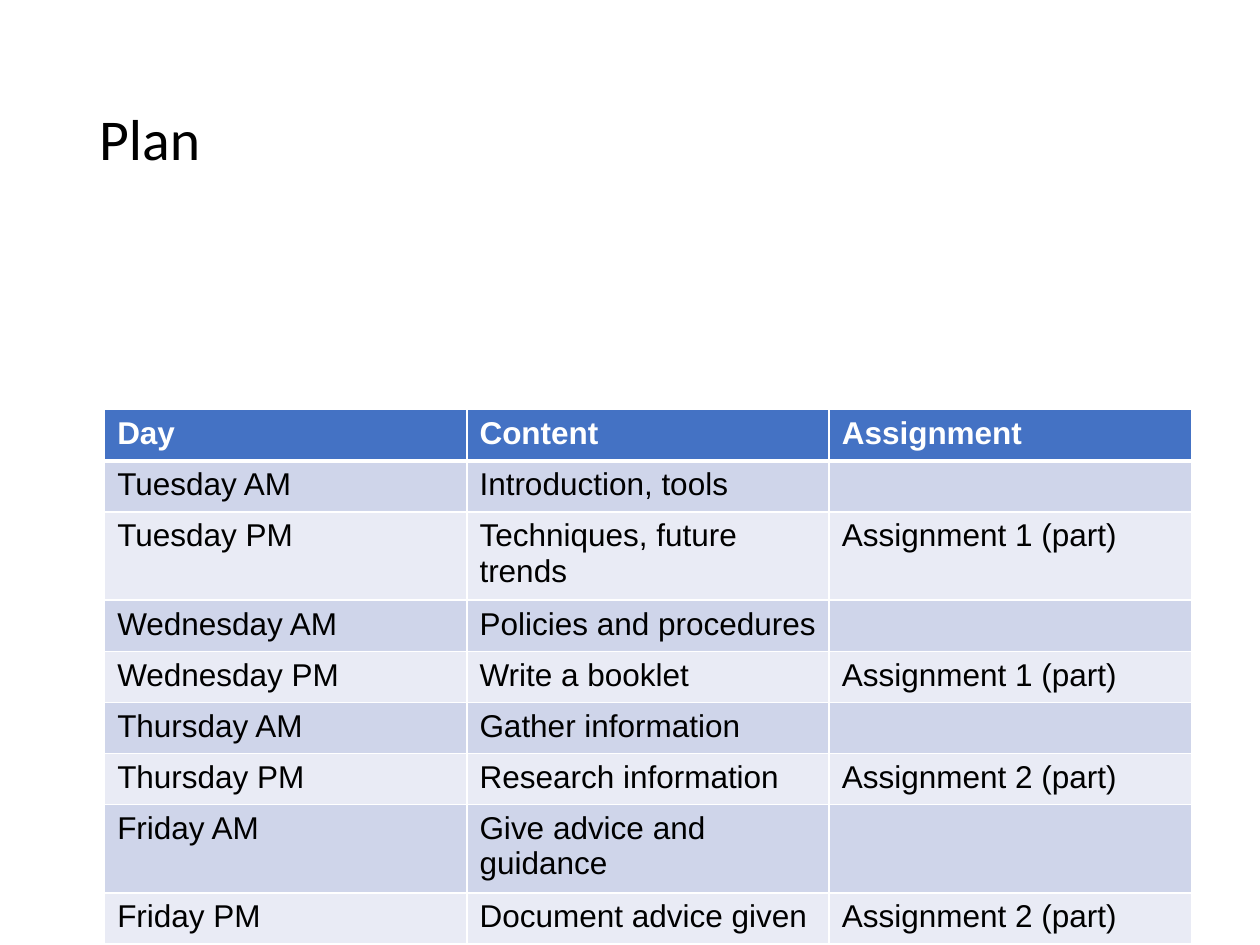
from dataclasses import dataclass

from lxml import etree
from pptx import Presentation
from pptx import util as u
from pptx.dml import color
from pptx.enum import text as t
from pptx.oxml import ns


@dataclass(frozen=True)
class Theme:
    """Colours, fonts and sizes of the slide."""
    ink: str = "000000"
    white: str = "FFFFFF"
    head: str = "4472C4"
    bands: tuple = ("CFD5EA", "E9EBF5")
    title: str = "Calibri"
    body: str = "Arial"
    big: int = 33
    small: int = 18
    thin: int = 1
    thick: int = 3


LOOK = Theme()
PLAN = (
    ("Day", "Content", "Assignment"),
    ("Tuesday AM", "Introduction, tools", ""),
    ("Tuesday PM", "Techniques, future trends", "Assignment 1 (part)"),
    ("Wednesday AM", "Policies and procedures", ""),
    ("Wednesday PM", "Write a booklet", "Assignment 1 (part)"),
    ("Thursday AM", "Gather information", ""),
    ("Thursday PM", "Research information", "Assignment 2 (part)"),
    ("Friday AM", "Give advice and guidance", ""),
    ("Friday PM", "Document advice given", "Assignment 2 (part)"),
)


def write(frame, words, font=LOOK.body, size=LOOK.small, ink=LOOK.ink,
          bold=False, space=1.0):
    """Put formatted words in a text frame."""
    para = frame.paragraphs[0]
    para.line_spacing = space
    para.font.size = u.Pt(size)
    if not words:
        return
    run = para.add_run()
    run.text = words
    run.font.name = font
    run.font.size = u.Pt(size)
    run.font.bold = bold
    run.font.color.rgb = color.RGBColor.from_string(ink)


def add_title(slide, words):
    """Add the slide heading."""
    box = slide.shapes.add_textbox(u.Cm(1.75), u.Cm(1.02), u.Cm(21.9), u.Cm(3.68))
    frame = box.text_frame
    frame.word_wrap = True
    frame.vertical_anchor = t.MSO_ANCHOR.MIDDLE
    write(frame, words, font=LOOK.title, size=LOOK.big, space=0.9)


def edge(cell, side, width):
    """Draw one white border of a cell."""
    props = cell._tc.get_or_add_tcPr()
    line = etree.SubElement(props, ns.qn(f"a:ln{side}"), w=str(u.Pt(width)))
    fill = etree.SubElement(line, ns.qn("a:solidFill"))
    etree.SubElement(fill, ns.qn("a:srgbClr"), val=LOOK.white)


def style(cell, row):
    """Give a cell its borders and row fill."""
    widths = {"L": LOOK.thin, "R": LOOK.thin,
              "T": LOOK.thick if row == 1 else LOOK.thin,
              "B": LOOK.thick if row == 0 else LOOK.thin}
    for side, width in widths.items():
        edge(cell, side, width)
    shade = LOOK.bands[(row - 1) % 2] if row else LOOK.head
    cell.fill.solid()
    cell.fill.fore_color.rgb = color.RGBColor.from_string(shade)


def add_plan(slide, rows):
    """Add the timetable with a header and banded rows."""
    high = u.Cm(1.03)
    grid = slide.shapes.add_table(len(rows), len(rows[0]), u.Cm(2.11), u.Cm(8.26),
                                  u.Cm(21.91), high * len(rows)).table
    grid.horz_banding = False
    for r, row in enumerate(rows):
        grid.rows[r].height = high
        for c, words in enumerate(row):
            cell = grid.cell(r, c)
            style(cell, r)
            write(cell.text_frame, words, bold=r == 0,
                  ink=LOOK.ink if r else LOOK.white)


def main():
    """Build and save the slide."""
    deck = Presentation()
    deck.slide_width, deck.slide_height = u.Cm(25.4), u.Cm(19.05)
    slide = deck.slides.add_slide(deck.slide_layouts[6])
    add_title(slide, "Plan")
    add_plan(slide, PLAN)
    deck.save("out.pptx")


if __name__ == "__main__":
    main()
